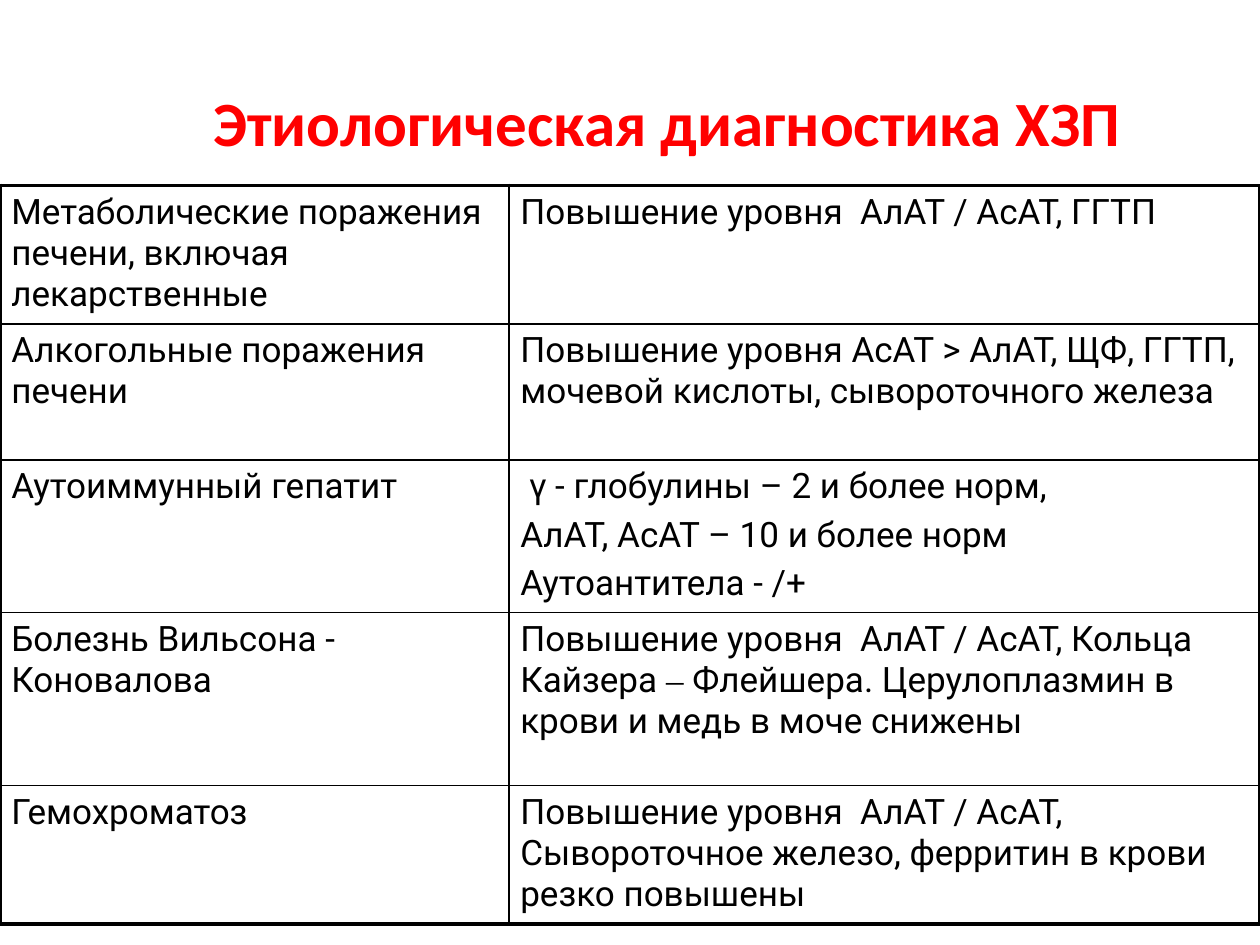
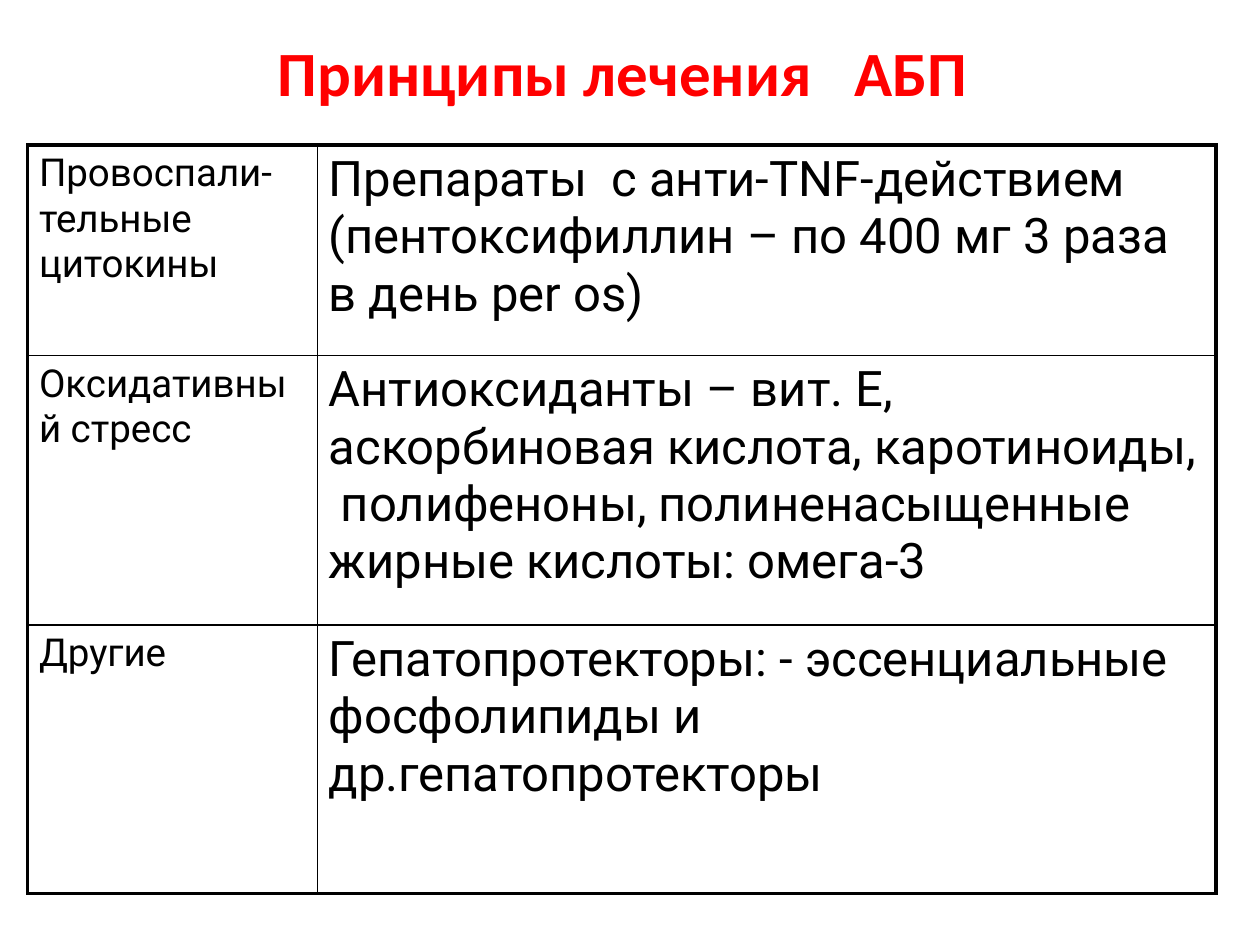
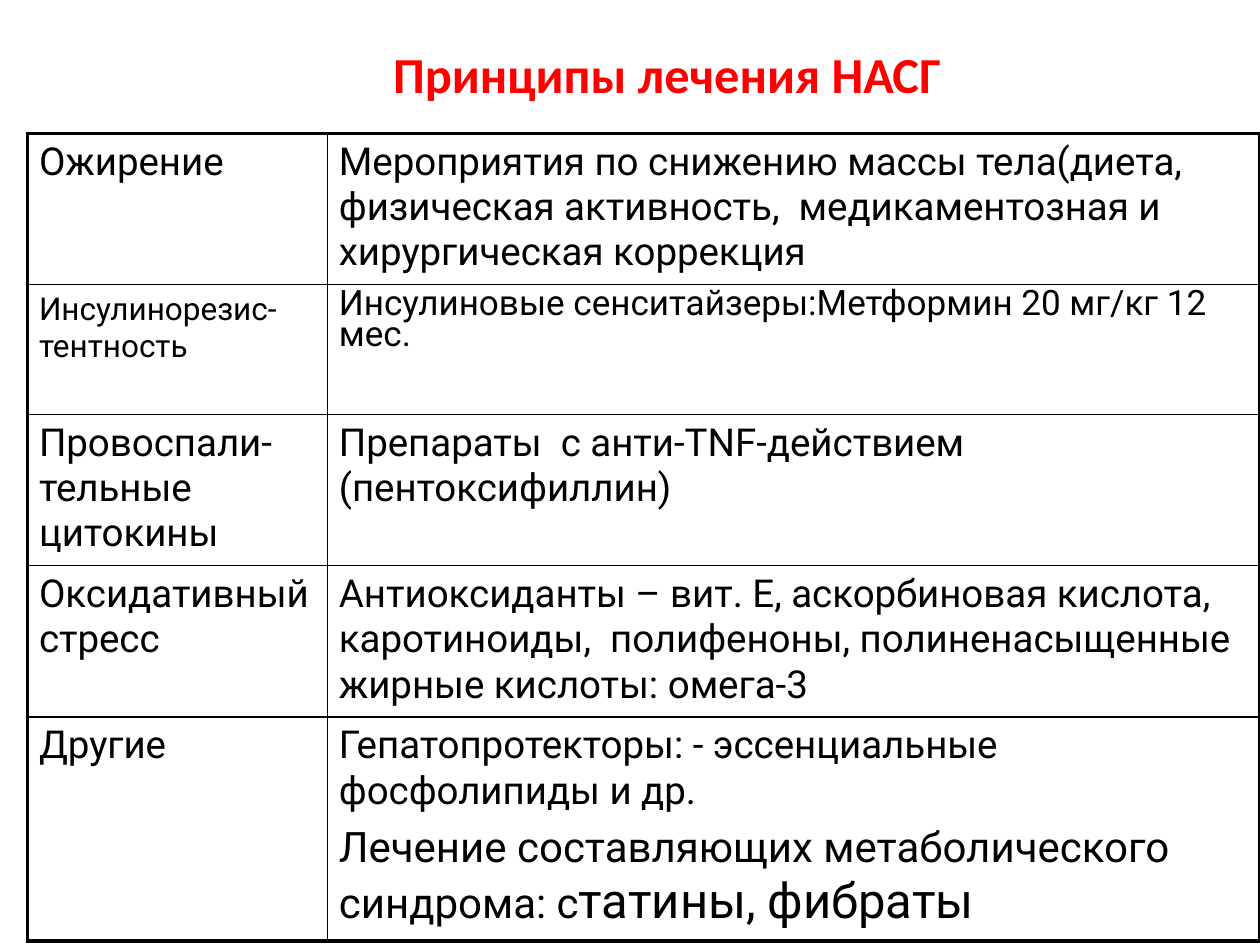
from itertools import product

from lxml.etree import SubElement
from pptx import Presentation
from pptx.dml.color import RGBColor
from pptx.enum.text import MSO_ANCHOR, PP_ALIGN
from pptx.oxml.ns import qn
from pptx.util import Inches, Pt

TITLE_COLOR = RGBColor(0xFF, 0x00, 0x00)
TEXT_COLOR = RGBColor(0x00, 0x00, 0x00)
CELL_COLOR = RGBColor(0xFF, 0xFF, 0xFF)
TITLE_FONT, BODY_FONT, DASH_FONT = "Calibri", "Roboto", "Times New Roman"
OUTER_LINE, INNER_LINE = Pt(2.25), Pt(1)
PARAGRAPH_GAP = 0.2  # share of the text size

# A cell is one string or a list of paragraphs; a paragraph is a string
# or a list of (text, overrides) runs. "sizes" holds one size per column.
SLIDES = [
    {
        "title": "Этиологическая диагностика ХЗП",
        "title_box": (1.17, 0.33, 8.25, 1.26),
        "title_size": 36,
        "table_origin": (0, 1.47),
        "columns": (4.04, 5.96),
        "row_heights": (1.08, 1.08, 1.19, 1.37, 1.08),
        "sizes": (20, 20),
        "rows": [
            ("Метаболические поражения печени, включая лекарственные",
             "Повышение уровня  АлАТ / АсАТ, ГГТП"),
            ("Алкогольные поражения печени",
             "Повышение уровня АсАТ > АлАТ, ЩФ, ГГТП, мочевой кислоты, "
             "сывороточного железа"),
            ("Аутоиммунный гепатит",
             [" γ - глобулины – 2 и более норм,",
              "АлАТ, АсАТ – 10 и более норм",
              "Аутоантитела - /+"]),
            ("Болезнь Вильсона - Коновалова",
             [[("Повышение уровня  АлАТ / АсАТ, Кольца Кайзера ", {}),
               ("–", {"font": DASH_FONT}),
               (" Флейшера. Церулоплазмин в крови и медь в моче снижены", {})]]),
            ("Гемохроматоз",
             "Повышение уровня  АлАТ / АсАТ, Сывороточное железо, "
             "ферритин в крови резко повышены"),
        ],
    },
    {
        "title": "Принципы лечения   АБП ",
        "title_box": (0, 0.21, 10, 0.71),
        "title_size": 36,
        "table_origin": (0.22, 1.15),
        "columns": (2.3, 7.13),
        "row_heights": (1.67, 2.14, 2.13),
        "sizes": (22, 28),
        "rows": [
            ("Провоспали-тельные цитокины",
             "Препараты  с анти-TNF-действием (пентоксифиллин – "
             "по 400 мг 3 раза в день реr оs)"),
            ("Оксидативный стресс",
             "Антиоксиданты – вит. Е, аскорбиновая кислота, каротиноиды,  "
             "полифеноны, полиненасыщенные жирные кислоты: омега-3"),
            ("Другие",
             "Гепатопротекторы: - эссенциальные фосфолипиды и "
             "др.гепатопротекторы"),
        ],
    },
    {
        "title": "Принципы лечения НАСГ",
        "title_box": (1.17, 0.33, 8.25, 0.5),
        "title_size": 28.8,
        "table_origin": (0.22, 1.06),
        "columns": (2.38, 7.4),
        "row_heights": (1.18, 1.03, 1.18, 1.18, 1.74),
        "sizes": (22, 22),
        "rows": [
            ("Ожирение",
             "Мероприятия по снижению массы тела(диета, физическая "
             "активность,  медикаментозная и хирургическая коррекция"),
            ([[("Инсулинорезис-тентность", {"size": 18})]],
             [[("Инсулиновые сенситайзеры:Метформин 20 мг/кг 12 мес.",
                {"size": 20, "line_spacing": 0.75})]]),
            ("Провоспали-тельные цитокины",
             "Препараты  с анти-TNF-действием (пентоксифиллин)"),
            ("Оксидативный стресс",
             "Антиоксиданты – вит. Е, аскорбиновая кислота, каротиноиды,  "
             "полифеноны, полиненасыщенные жирные кислоты: омега-3"),
            ("Другие",
             ["Гепатопротекторы: - эссенциальные фосфолипиды и др.",
              [("Лечение составляющих метаболического синдрома: с", {"size": 24}),
               ("татины, фибраты", {"size": 28})]]),
        ],
    },
]


def format_run(run, font, size, color, bold=False):
    run.font.name = font
    run.font.size = Pt(size)
    run.font.color.rgb = color
    run.font.bold = bold


def add_title(slide, text, box, size):
    text_box = slide.shapes.add_textbox(*(Inches(length) for length in box))
    frame = text_box.text_frame
    frame.word_wrap = True
    frame.vertical_anchor = MSO_ANCHOR.MIDDLE
    frame.text = text
    paragraph = frame.paragraphs[0]
    paragraph.alignment = PP_ALIGN.CENTER
    format_run(paragraph.runs[0], TITLE_FONT, size, TITLE_COLOR, bold=True)


def fill_cell_text(cell, content, size):
    frame = cell.text_frame
    paragraphs = [content] if isinstance(content, str) else content
    for index, runs in enumerate(paragraphs):
        paragraph = frame.add_paragraph() if index else frame.paragraphs[0]
        if isinstance(runs, str):
            runs = [(runs, {})]
        for text, overrides in runs:
            run = paragraph.add_run()
            run.text = text
            run_size = overrides.get("size", size)
            format_run(run, overrides.get("font", BODY_FONT), run_size, TEXT_COLOR)
            if "line_spacing" in overrides:
                paragraph.line_spacing = overrides["line_spacing"]
            if index:
                paragraph.space_before = Pt(PARAGRAPH_GAP * run_size)


def style_cell(cell, outer_sides):
    """Draw thick lines on the outer sides and thin ones elsewhere."""
    cell.margin_left = cell.margin_right = Inches(0.09)
    cell.margin_top = cell.margin_bottom = Inches(0.05)
    properties = cell._tc.get_or_add_tcPr()
    for side, is_outer in outer_sides.items():
        width = OUTER_LINE if is_outer else INNER_LINE
        line = SubElement(properties, qn(f"a:ln{side}"), w=str(width))
        fill = SubElement(line, qn("a:solidFill"))
        SubElement(fill, qn("a:srgbClr"), val=str(TEXT_COLOR))
    cell.fill.solid()
    cell.fill.fore_color.rgb = CELL_COLOR


def add_grid(slide, origin, columns, row_heights, sizes, rows):
    left, top = origin
    frame = slide.shapes.add_table(
        len(rows), len(columns), Inches(left), Inches(top),
        Inches(sum(columns)), Inches(sum(row_heights)))
    table = frame.table
    table.first_row = table.horz_banding = False
    for column, width in zip(table.columns, columns):
        column.width = Inches(width)
    for row, height in zip(table.rows, row_heights):
        row.height = Inches(height)
    for row, column in product(range(len(rows)), range(len(columns))):
        cell = table.cell(row, column)
        fill_cell_text(cell, rows[row][column], sizes[column])
        style_cell(cell, {
            "L": column == 0,
            "R": column == len(columns) - 1,
            "T": row == 0,
            "B": row == len(rows) - 1,
        })


def main():
    presentation = Presentation()
    presentation.slide_width = Inches(10)
    presentation.slide_height = Inches(7.5)
    for content in SLIDES:
        slide = presentation.slides.add_slide(presentation.slide_layouts[6])
        add_title(slide, content["title"], content["title_box"], content["title_size"])
        add_grid(slide, content["table_origin"], content["columns"],
                 content["row_heights"], content["sizes"], content["rows"])
    presentation.save("out.pptx")


if __name__ == "__main__":
    main()
